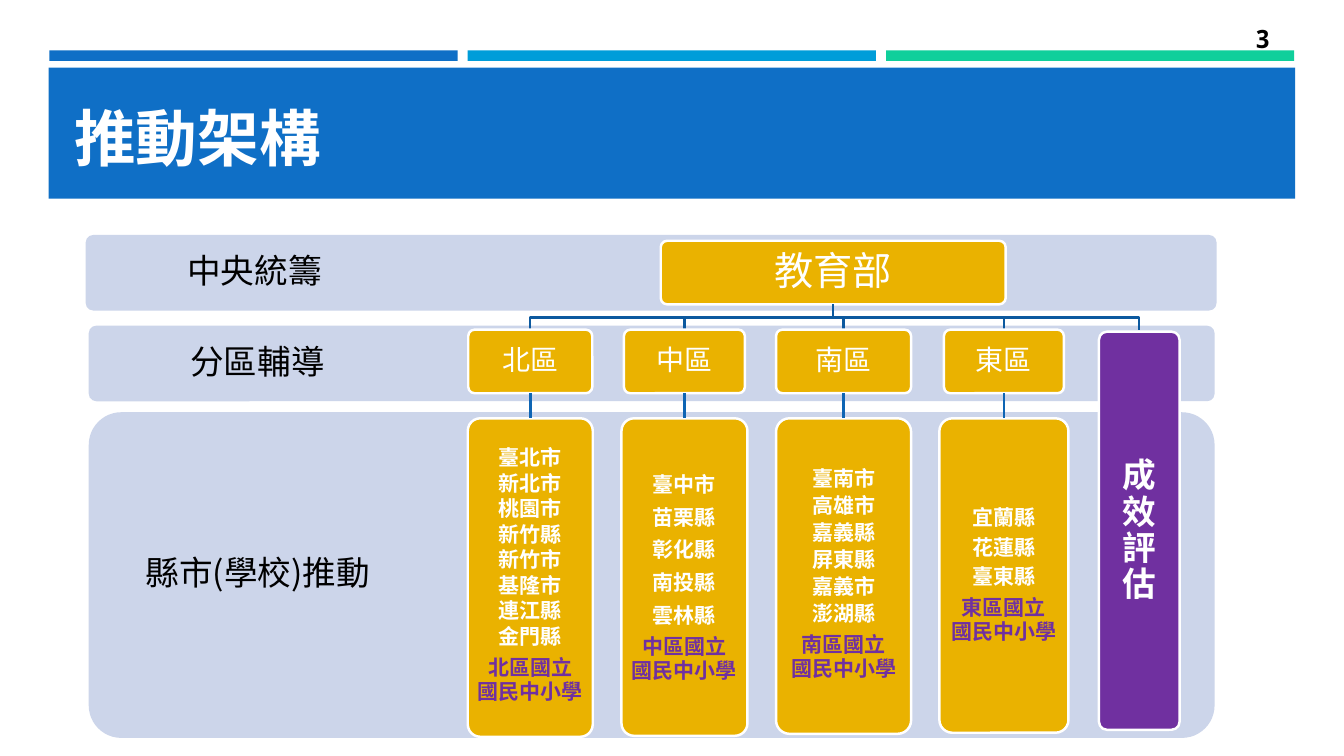
"""Build the slide on the promotion framework: ministry, regions, counties and evaluation."""
from lxml.etree import SubElement
from pptx import Presentation
from pptx.dml.color import RGBColor
from pptx.enum.shapes import MSO_CONNECTOR, MSO_SHAPE
from pptx.enum.text import MSO_ANCHOR as ANCHOR, PP_ALIGN as ALIGN
from pptx.oxml.ns import qn
from pptx.util import Pt

BLUE = RGBColor(0x0F, 0x6F, 0xC6)
SKY = RGBColor(0x00, 0x9D, 0xD9)
GREEN = RGBColor(0x10, 0xCF, 0x9B)
BAND = RGBColor(0xCC, 0xD5, 0xEA)
GOLD = RGBColor(0xEA, 0xB2, 0x00)
PURPLE = RGBColor(0x70, 0x30, 0xA0)
ELBOW = RGBColor(0x0C, 0x59, 0x9F)
STEM = RGBColor(0x0E, 0x65, 0xB4)
WHITE = RGBColor(0xFF, 0xFF, 0xFF)
BLACK = RGBColor(0x00, 0x00, 0x00)
CJK = "Noto Sans CJK SC"

deck = Presentation()
deck.slide_width, deck.slide_height = Pt(960), Pt(540)
slide = deck.slides.add_slide(deck.slide_layouts[6])
shapes = slide.shapes


def add_block(kind, box, fill, outlined=False):
    block = shapes.add_shape(kind, *map(Pt, box))
    block.shadow.inherit = False
    block.fill.solid()
    block.fill.fore_color.rgb = fill
    if kind == MSO_SHAPE.ROUNDED_RECTANGLE:
        block.adjustments[0] = 0.1
    if outlined:
        block.line.color.rgb = WHITE
        block.line.width = Pt(1.75)
    else:
        block.line.fill.background()
    return block


def write(shape, lines, size, color, bold=False, align=ALIGN.CENTER, spacing=0.9,
          after=0, anchor=ANCHOR.MIDDLE, margin=0, font=CJK):
    frame = shape.text_frame
    layout = {"word_wrap": True, "vertical_anchor": anchor, "margin_left": Pt(margin),
              "margin_right": Pt(margin), "margin_top": Pt(4), "margin_bottom": Pt(4)}
    for key, value in layout.items():
        setattr(frame, key, value)
    frame.text = "\n".join(lines)
    for paragraph in frame.paragraphs:
        style = {"alignment": align, "line_spacing": spacing, "space_after": Pt(after)}
        for key, value in style.items():
            setattr(paragraph, key, value)
        run = paragraph.runs[0]
        for key, value in {"size": Pt(size), "bold": bold, "name": font}.items():
            setattr(run.font, key, value)
        run.font.color.rgb = color
        SubElement(run._r.get_or_add_rPr(), qn("a:ea")).set("typeface", font)
    return frame


RECT, ROUND = MSO_SHAPE.RECTANGLE, MSO_SHAPE.ROUNDED_RECTANGLE

for index, color in enumerate((BLUE, SKY, GREEN)):
    add_block(RECT, (35.3 + 298.8 * index, 36, 291.6, 7.5), color)
add_block(RECT, (34.8, 48.4, 890.4, 93.6), BLUE)

title = shapes.add_textbox(Pt(46), Pt(49), Pt(868), Pt(80))
write(title, ["推動架構"], 44, WHITE, True, ALIGN.LEFT, anchor=ANCHOR.BOTTOM, margin=7.2)
page_number = shapes.add_textbox(Pt(831.6), Pt(13), Pt(82.8), Pt(28.8))
write(page_number, ["3"], 18, BLACK, True, ALIGN.RIGHT, 1.0, margin=7.2, font="Noto Sans Mono")

levels = [
    ("縣市(學校)推動", 63.4, 294.5, 804.2, 232.6),
    ("分區輔導", 63.4, 232.6, 804.2, 54),
    ("中央統籌", 61.2, 167.8, 807.8, 54),
]
for level, left, top, width, height in levels:
    add_block(ROUND, (left, top, width, height), BAND)
    label = shapes.add_textbox(Pt(left), Pt(top), Pt(241.2), Pt(height))
    write(label, [level], 24, BLACK)

MINISTRY_X, MINISTRY_BOTTOM, REGION_TOP, EVALUATION_X = 595.2, 217.4, 235.5, 813.8
ministry = add_block(ROUND, (472, 172, 246.4, 45.4), GOLD, True)
write(ministry, ["教育部"], 28, WHITE)

regions = [
    ("北區", 378.8, 88.6, 89.3, 227.5, 13, "臺北市 新北市 桃園市 新竹縣 新竹市 基隆市 連江縣 金門縣"),
    ("中區", 488.9, 86.4, 90, 226.8, 18, "臺中市 苗栗縣 彰化縣 南投縣 雲林縣"),
    ("南區", 602.6, 96.5, 96.5, 225.4, 14, "臺南市 高雄市 嘉義縣 屏東縣 嘉義市 澎湖縣"),
    ("東區", 717.1, 85.7, 92.2, 224.6, 16, "宜蘭縣 花蓮縣 臺東縣"),
]

for branch_x in [region[1] for region in regions] + [EVALUATION_X]:
    outline = shapes.build_freeform(Pt(MINISTRY_X), Pt(MINISTRY_BOTTOM))
    corners = [(MINISTRY_X, 226.8), (branch_x, 226.8), (branch_x, REGION_TOP)]
    outline.add_line_segments([(Pt(x), Pt(y)) for x, y in corners], close=False)
    branch = outline.convert_to_shape()
    branch.shadow.inherit = False
    branch.fill.background()
    branch.line.color.rgb = ELBOW
    branch.line.width = Pt(1.75)

for name, center, region_width, county_width, county_height, spacing, counties in regions:
    region = add_block(ROUND, (center - region_width / 2, REGION_TOP, region_width, 45.4), GOLD, True)
    write(region, [name], 20, WHITE)
    county_box = add_block(
        ROUND, (center - county_width / 2, 298.8, county_width, county_height), GOLD, True)
    school = f"{name}國立 國民中小學"
    frame = write(county_box, counties.split() + [school], 15, WHITE, True, spacing=Pt(spacing),
                  after=5.25, margin=county_width * 0.47 - 38.25)
    school_line = frame.paragraphs[-1]
    school_line.line_spacing = Pt(17)
    school_line.runs[0].font.color.rgb = PURPLE
    stem = shapes.add_connector(MSO_CONNECTOR.STRAIGHT, Pt(center), Pt(280.9), Pt(center), Pt(298.8))
    stem.begin_connect(region, 2)
    stem.end_connect(county_box, 0)
    stem.line.color.rgb = STEM
    stem.line.width = Pt(1.75)
    SubElement(stem._element.spPr, qn("a:effectLst"))

evaluation = add_block(ROUND, (EVALUATION_X - 28.8, 236.9, 57.6, 284.4), PURPLE, True)
write(evaluation, ["成效評估"], 24, WHITE, True, spacing=Pt(26), margin=7.2)

deck.save("out.pptx")
